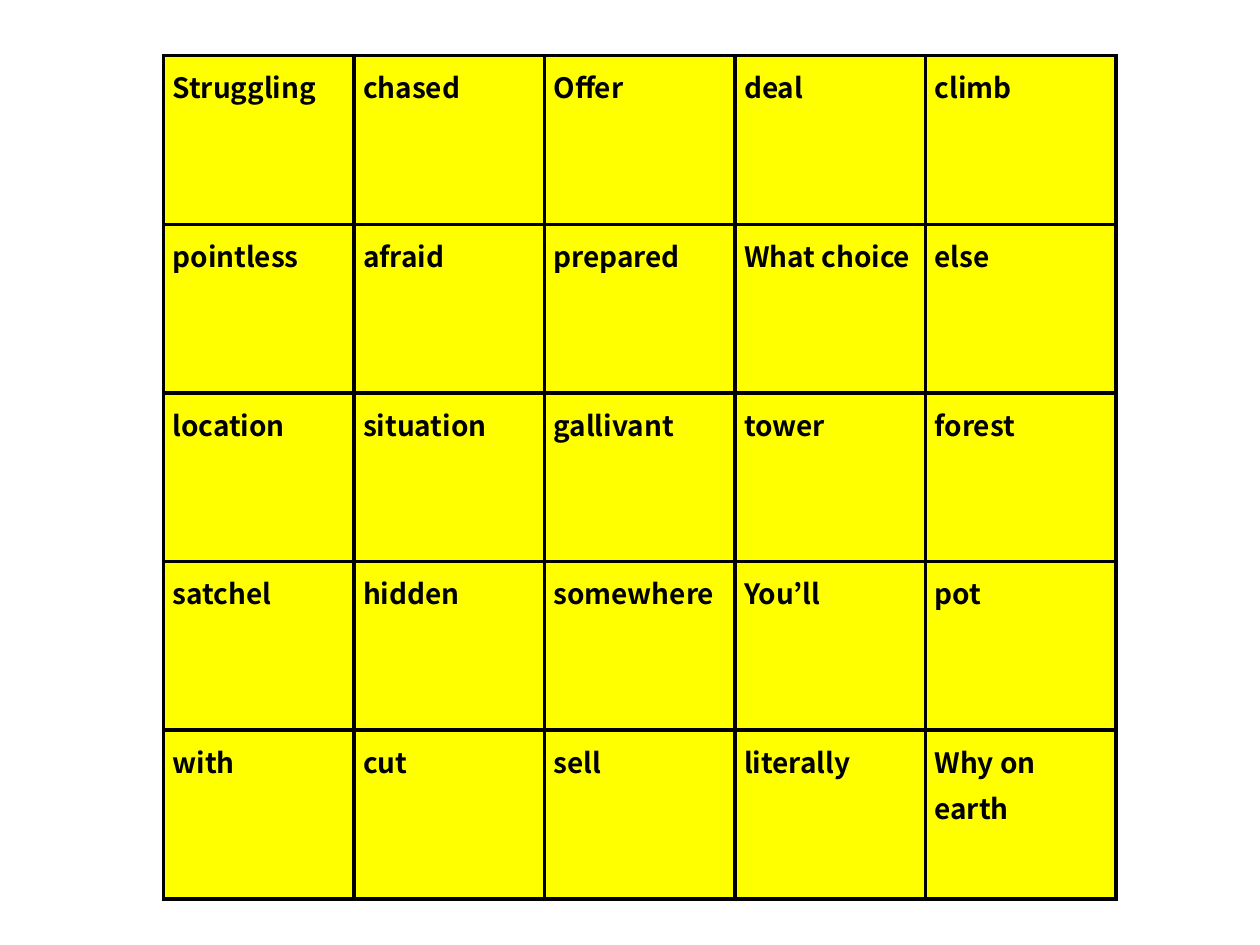
"""Build a slide with a five-by-five word bingo grid."""
import pptx
import pptx.dml.color
import pptx.util
from lxml import etree
from pptx.oxml.ns import qn

Cm, Pt = pptx.util.Cm, pptx.util.Pt
RGBColor = pptx.dml.color.RGBColor

WORDS = [
    ["Struggling", "chased", "Offer", "deal", "climb"],
    ["pointless", "afraid", "prepared", "What choice", "else"],
    ["location", "situation", "gallivant", "tower", "forest"],
    ["satchel", "hidden", "somewhere", "You’ll", "pot"],
    ["with", "cut", "sell", "literally", "Why on earth"],
]
FONT = "Noto Sans CJK KR"
BLACK = RGBColor(0x00, 0x00, 0x00)
YELLOW = RGBColor(0xFF, 0xFF, 0x00)
LEFT, TOP = Cm(3.3), Cm(1.12)
CELL_W, CELL_H = Cm(3.84), Cm(3.4)
BORDER = Pt(2.25)


def add_borders(cell):
    tcPr = cell._tc.get_or_add_tcPr()
    for side in ("lnL", "lnR", "lnT", "lnB"):
        ln = etree.SubElement(tcPr, qn("a:" + side), w=str(BORDER))
        fill = etree.SubElement(ln, qn("a:solidFill"))
        etree.SubElement(fill, qn("a:srgbClr"), val=str(BLACK))


def fill_cell(cell, word):
    add_borders(cell)
    cell.fill.solid()
    cell.fill.fore_color.rgb = YELLOW
    cell.margin_left = cell.margin_right = Cm(0.18)
    cell.margin_top = cell.margin_bottom = Cm(0.1)
    cell.text_frame.text = word
    p = cell.text_frame.paragraphs[0]
    p.line_spacing = 1.15
    font = p.runs[0].font
    font.name, font.size, font.bold = FONT, Pt(16), True
    font.color.rgb = BLACK


def main():
    prs = pptx.Presentation()
    prs.slide_width, prs.slide_height = Cm(25.4), Cm(19.05)
    s = prs.slides.add_slide(prs.slide_layouts[6])
    rows, cols = len(WORDS), len(WORDS[0])
    table = s.shapes.add_table(rows, cols, LEFT, TOP, cols * CELL_W, rows * CELL_H).table
    table.first_row = table.horz_banding = False
    for column in table.columns:
        column.width = CELL_W
    for row, words in zip(table.rows, WORDS):
        row.height = CELL_H
        for cell, word in zip(row.cells, words):
            fill_cell(cell, word)
    prs.save("out.pptx")


if __name__ == "__main__":
    main()
